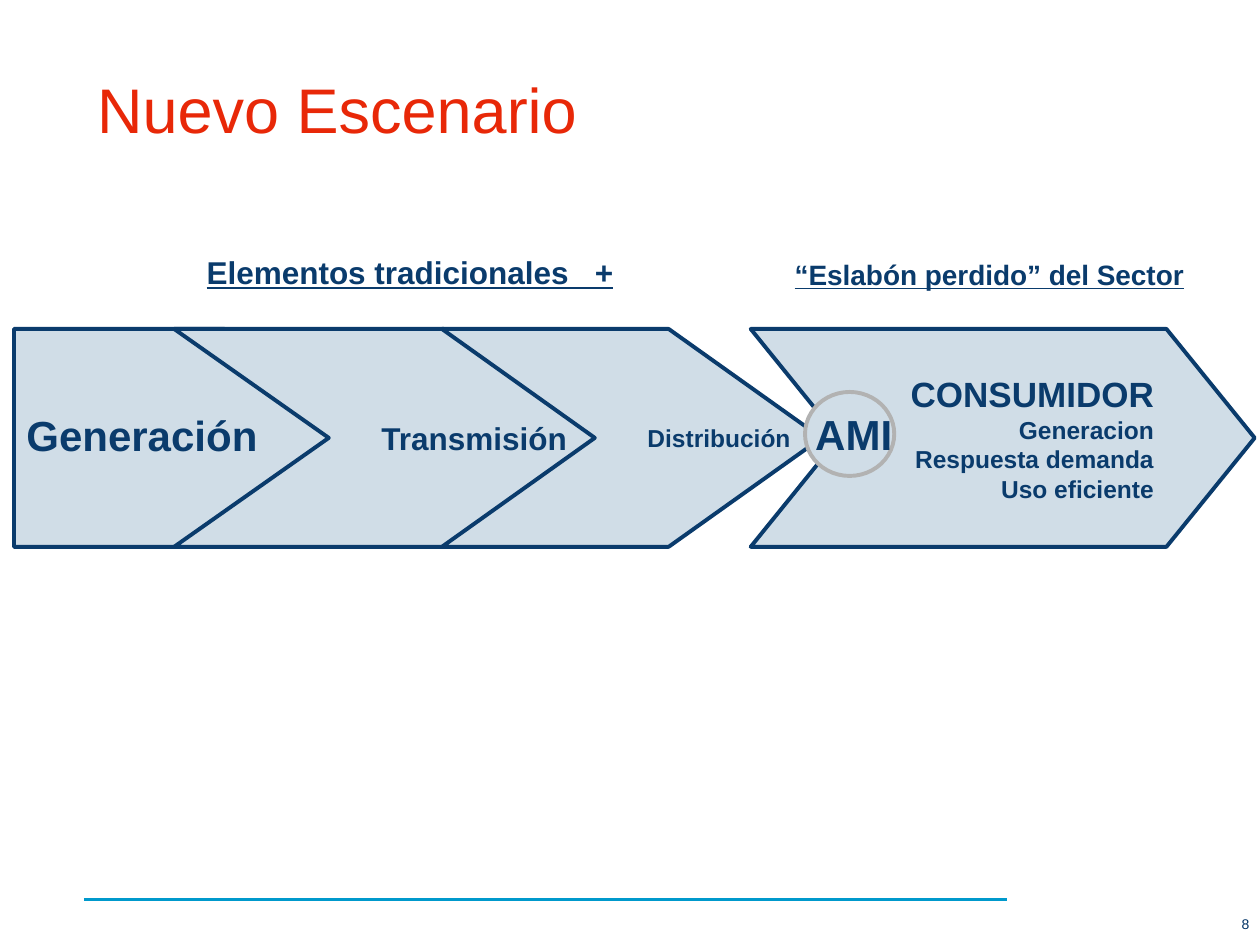
from dataclasses import dataclass

from pptx import Presentation
from pptx.dml.color import RGBColor
from pptx.enum.shapes import MSO_CONNECTOR, MSO_SHAPE as SHAPE
from pptx.enum.text import MSO_ANCHOR as ANCHOR, MSO_AUTO_SIZE as AUTO, PP_ALIGN as ALIGN
from pptx.oxml.ns import qn
from pptx.util import Pt


@dataclass(frozen=True)
class Theme:
    font: str = "Arial"
    # Colours
    title: str = "E82808"
    navy: str = "0A3B6C"
    pale: str = "D0DDE7"
    grey: str = "B2B2B2"
    rule: str = "0099CC"
    number: str = "003366"
    # Type sizes and line width
    title_size: int = 36
    big: int = 24
    consumer: int = 20
    heading: int = 18
    subheading: int = 16
    small: int = 14
    number_size: int = 8
    line: float = 2.25


T = Theme()
BAND_TOP, BAND_HEIGHT = 188, 124.5


def rgb(value):
    return RGBColor.from_string(value)


def set_margins(tf, side, end):
    tf.margin_left = tf.margin_right = Pt(side)
    tf.margin_top = tf.margin_bottom = Pt(end)


def add_run(p, text, size, color=T.navy, bold=True, underline=False):
    r = p.add_run()
    r.text = text
    font = r.font
    font.name, font.size, font.bold = T.font, Pt(size), bold
    font.underline = underline
    font.color.rgb = rgb(color)


def add_text(slide, box, text, size, align=ALIGN.LEFT, wrap=False, **style):
    sp = slide.shapes.add_textbox(*map(Pt, box))
    tf = sp.text_frame
    tf.word_wrap = wrap
    tf.paragraphs[0].alignment = align
    add_run(tf.paragraphs[0], text, size, **style)
    return tf


def add_label(slide, box, text, size, underline=False):
    tf = add_text(slide, box, text, size, underline=underline)
    tf.auto_size = AUTO.SHAPE_TO_FIT_TEXT


def add_outlined(slide, kind, box, line=T.navy):
    sp = slide.shapes.add_shape(kind, *map(Pt, box))
    sp.shadow.inherit = False
    sp.fill.solid()
    sp.fill.fore_color.rgb = rgb(T.pale)
    sp.line.color.rgb = rgb(line)
    sp.line.width = Pt(T.line)
    return sp


def add_stage(slide, kind, left, width, point, lines, align=ALIGN.LEFT,
              margin=0, indent=0, spacing=None):
    sp = add_outlined(slide, kind, (left, BAND_TOP, width, BAND_HEIGHT))
    sp.adjustments[0] = point
    tf = sp.text_frame
    tf.word_wrap = False
    tf.vertical_anchor = ANCHOR.MIDDLE
    set_margins(tf, 7.2, 3.6)
    for i, (text, size) in enumerate(lines):
        p = tf.add_paragraph() if i else tf.paragraphs[0]
        pPr = p._p.get_or_add_pPr()
        pPr.set("marL", str(Pt(margin)))
        pPr.set("indent", str(Pt(indent)))
        p.alignment = align
        p.line_spacing = spacing
        add_run(p, text, size)


def add_rule(slide, x1, x2, y):
    line = slide.shapes.add_connector(MSO_CONNECTOR.STRAIGHT, Pt(x1), Pt(y), Pt(x2), Pt(y))
    line.line.color.rgb = rgb(T.rule)
    line.line.width = Pt(T.line)
    spPr = line._element.spPr
    spPr.append(spPr.makeelement(qn("a:effectLst"), {}))


def main():
    prs = Presentation()
    prs.slide_width, prs.slide_height = Pt(720), Pt(540)
    slide = prs.slides.add_slide(prs.slide_layouts[6])

    # Footer rule, title and slide number
    add_rule(slide, 48, 575.5, 514)
    tf = add_text(slide, (53.5, 42, 615.5, 72), "Nuevo Escenario", T.title_size,
                  wrap=True, color=T.title, bold=False)
    set_margins(tf, 2, 5)
    tf.paragraphs[0].line_spacing = Pt(36.5)
    tf = add_text(slide, (571, 515.5, 149, 24.5), "8", T.number_size,
                  ALIGN.RIGHT, color=T.number, bold=False)
    set_margins(tf, 6, 3)
    tf.vertical_anchor = ANCHOR.MIDDLE

    # Value chain
    add_stage(slide, SHAPE.PENTAGON, 8, 203, 0.664, [("Generación", T.big)], spacing=0.9)
    add_stage(slide, SHAPE.CHEVRON, 99.5, 242.5, 0.71,
              [("Transmisión", T.heading)], indent=23)
    add_stage(slide, SHAPE.CHEVRON, 252.5, 217, 0.702,
              [("Distribución", T.small)], margin=23)
    add_stage(slide, SHAPE.CHEVRON, 429, 288, 0.405,
              [("CONSUMIDOR", T.consumer), ("Generacion", T.small),
               ("Respuesta demanda", T.small), ("Uso eficiente", T.small)],
              align=ALIGN.RIGHT)

    # Headings above the chain
    add_label(slide, (111, 141, 249, 29), "Elementos tradicionales   +", T.heading, True)
    add_label(slide, (447, 143.5, 240, 26.5), "“Eslabón perdido” del Sector",
              T.subheading, True)

    # Link between distribution and consumer
    add_outlined(slide, SHAPE.OVAL, (460, 224, 51, 48), T.grey)
    add_label(slide, (458.75, 229.75, 59, 36), "AMI", T.big)

    prs.save("out.pptx")


if __name__ == "__main__":
    main()
